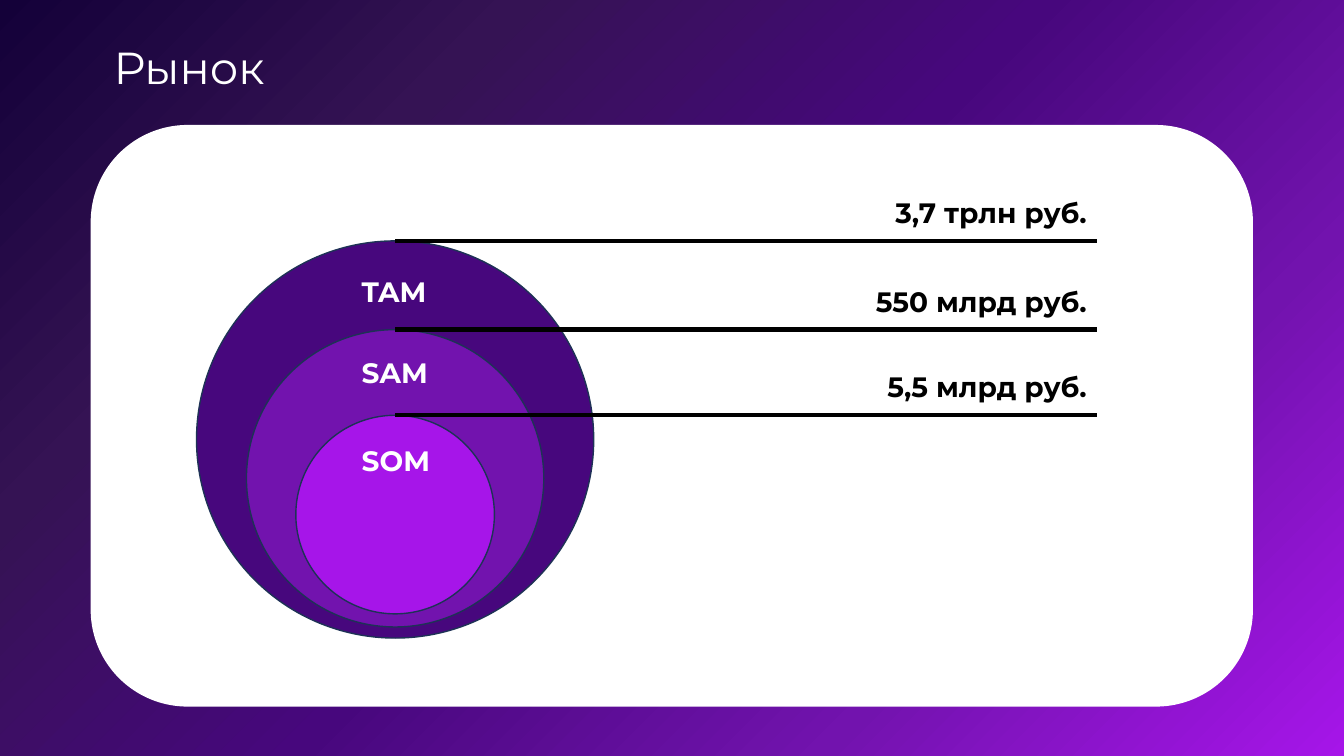
"""Build the market-size slide with nested TAM, SAM and SOM circles."""
from collections import namedtuple
from dataclasses import dataclass

import lxml.etree
import pptx
import pptx.dml.color
import pptx.enum.shapes
import pptx.enum.text
import pptx.oxml.ns
import pptx.util

Market = namedtuple("Market", "name value color diameter top label_top")


@dataclass(frozen=True)
class Theme:
    """Colours, font and type sizes of the slide."""
    font: str = "Montserrat"
    title_size: int = 32
    label_size: int = 20
    white: str = "FFFFFF"
    black: str = "000000"
    outline: str = "1E3256"
    tam: str = "47077D"
    sam: str = "7213AE"
    som: str = "A615E9"
    gradient: tuple = ("140139", "351354", "47077D", "7213AE", "A615E9")


THEME = Theme()
CELL = pptx.util.Inches(0.1)
COLUMNS, ROWS = 133.33, 75
CENTER, LEADER_END = 39.2, 108.8
LABEL_LEFT, VALUE_WIDTH, TEXT_HEIGHT = 34.9, 24, 4.4
VALUE_LIFT = 5

MARKETS = (
    Market("TAM", "3,7 трлн руб.", THEME.tam, 39.4, 23.9, 26.7),
    Market("SAM", "550 млрд руб.", THEME.sam, 29.5, 32.7, 34.8),
    Market("SOM", "5,5 млрд руб.", THEME.som, 19.7, 41.2, 43.5),
)


def grid(*cells):
    """Convert grid columns or rows to slide lengths."""
    return [round(cell * CELL) for cell in cells]


def rgb(color):
    """Return a colour object for a hex string."""
    return pptx.dml.color.RGBColor.from_string(color)


def paint_background(s, colors, angle=45):
    """Fill the slide background with evenly spaced gradient stops."""
    qn = pptx.oxml.ns.qn
    s.background.fill.gradient()
    fill = next(s.element.iter(qn("a:gradFill")))
    stops = fill.find(qn("a:gsLst"))
    for stop in list(stops):
        stops.remove(stop)
    for i, color in enumerate(colors):
        position = 100000 * i // (len(colors) - 1)
        stop = lxml.etree.SubElement(stops, qn("a:gs"), pos=str(position))
        lxml.etree.SubElement(stop, qn("a:srgbClr"), val=color)
    direction = fill.find(qn("a:lin"))
    direction.set("ang", str(angle * 60000))
    direction.set("scaled", "0")


def add_figure(s, kind, box, color, outline=None):
    """Add a filled preset shape with an optional thin outline."""
    sp = s.shapes.add_shape(kind, *grid(*box))
    sp.shadow.inherit = False
    sp.fill.solid()
    sp.fill.fore_color.rgb = rgb(color)
    if outline:
        sp.line.color.rgb = rgb(outline)
        sp.line.width = pptx.util.Pt(1)
    else:
        sp.line.fill.background()


def add_text(s, text, box, size, color, bold=False, right=False):
    """Add a single line of text."""
    align = pptx.enum.text.PP_ALIGN
    tf = s.shapes.add_textbox(*grid(*box)).text_frame
    tf.word_wrap = False
    tf.auto_size = pptx.enum.text.MSO_AUTO_SIZE.SHAPE_TO_FIT_TEXT
    p = tf.paragraphs[0]
    p.text = text
    p.alignment = align.RIGHT if right else align.LEFT
    font = p.runs[0].font
    font.name, font.size, font.bold = THEME.font, pptx.util.Pt(size), bold
    font.color.rgb = rgb(color)


def add_leader(s, row):
    """Add a horizontal line from the circles to the values."""
    kind = pptx.enum.shapes.MSO_CONNECTOR.STRAIGHT
    line = s.shapes.add_connector(kind, *grid(CENTER, row, LEADER_END, row))
    line.line.color.rgb = rgb(THEME.black)
    line.line.width = pptx.util.Pt(3)
    properties = line.element.find(pptx.oxml.ns.qn("p:spPr"))
    lxml.etree.SubElement(properties, pptx.oxml.ns.qn("a:effectLst"))


def add_circle(s, market):
    """Add the circle of one market."""
    d = market.diameter
    add_figure(s, pptx.enum.shapes.MSO_SHAPE.OVAL,
               (CENTER - d / 2, market.top, d, d), market.color, THEME.outline)


def add_labels(s, market):
    """Add the name and the value of one market."""
    add_text(s, market.name, (LABEL_LEFT, market.label_top, 8.9, TEXT_HEIGHT),
             THEME.label_size, THEME.white, bold=True)
    value_box = (LEADER_END - VALUE_WIDTH, market.top - VALUE_LIFT,
                 VALUE_WIDTH, TEXT_HEIGHT)
    add_text(s, market.value, value_box, THEME.label_size, THEME.black,
             bold=True, right=True)


def main():
    """Build and save the slide."""
    prs = pptx.Presentation()
    prs.slide_width, prs.slide_height = grid(COLUMNS, ROWS)
    s = prs.slides.add_slide(prs.slide_layouts[6])
    paint_background(s, THEME.gradient)
    add_figure(s, pptx.enum.shapes.MSO_SHAPE.ROUNDED_RECTANGLE,
               (9, 12.4, 115.3, 57.7), THEME.white)
    add_text(s, "Рынок", (10.3, 3.4, 18.4, 6.4), THEME.title_size, THEME.white)
    for market in MARKETS:
        add_circle(s, market)
    for market in MARKETS:
        add_leader(s, market.top)
        add_labels(s, market)
    prs.save("out.pptx")


if __name__ == "__main__":
    main()
